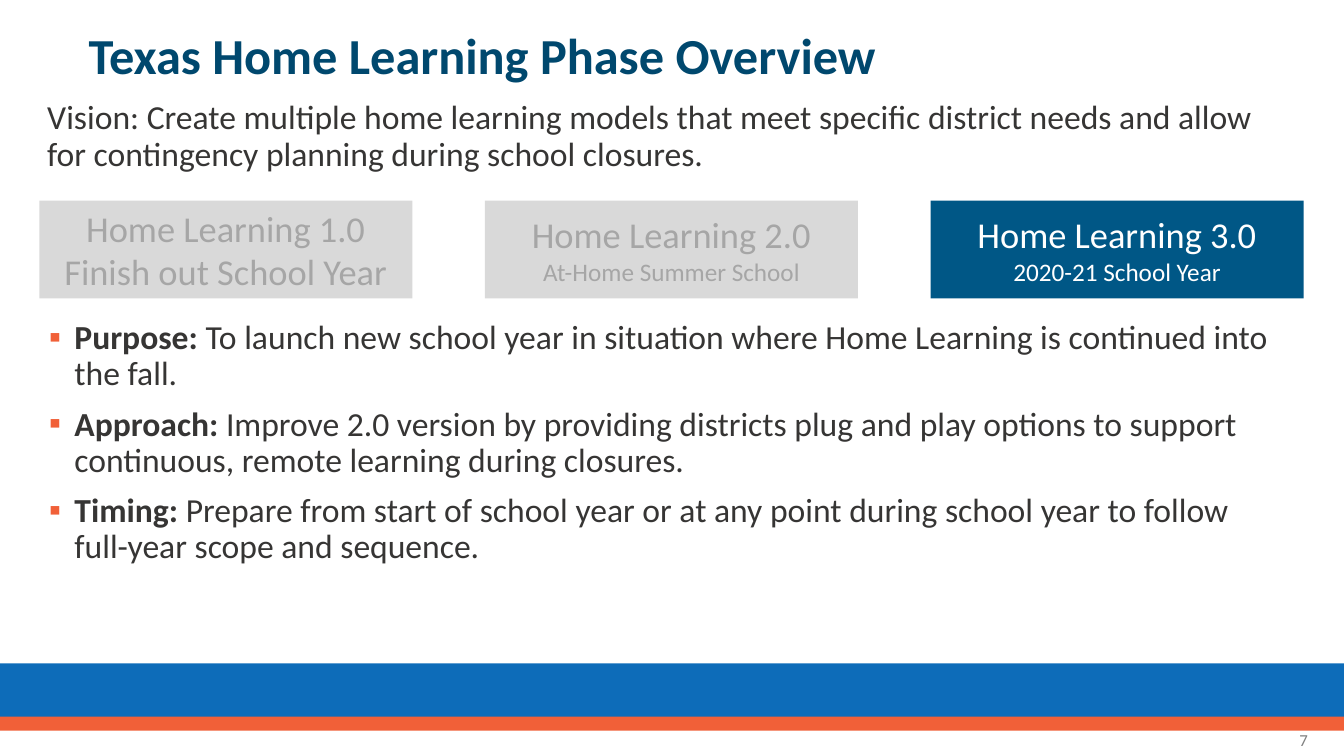
from lxml import etree
from pptx import Presentation
from pptx import util as u
from pptx.dml.color import RGBColor
from pptx.enum import shapes, text
from pptx.oxml.ns import qn

PX = 9144
FONT = "Calibri"
WHITE = RGBColor(0xFF, 0xFF, 0xFF)
NAVY = RGBColor(0x00, 0x48, 0x6E)
TEAL = RGBColor(0x00, 0x57, 0x86)
BLUE = RGBColor(0x0D, 0x6C, 0xB9)
ORANGE = RGBColor(0xF1, 0x60, 0x38)
INK = RGBColor(0x36, 0x35, 0x34)
LIGHT = RGBColor(0xD9, 0xD9, 0xD9)
FADED = RGBColor(0xA6, 0xA6, 0xA6)
GRAY = RGBColor(0x80, 0x80, 0x80)

PHASES = [
    ("Home Learning 1.0", "Finish out School Year", 26, LIGHT, FADED),
    ("Home Learning 2.0", "At-Home Summer School", 18, LIGHT, FADED),
    ("Home Learning 3.0", "2020-21 School Year", 18, TEAL, WHITE),
]
POINTS = [
    ("Purpose:", " To launch new school year in situation where Home Learning "
     "is continued into the fall."),
    ("Approach: ", "Improve 2.0 version by providing districts plug and play options "
     "to support continuous, remote learning during closures."),
    ("Timing: ", "Prepare from start of school year or at any point during school year "
     "to follow full-year scope and sequence."),
]


def emu(*lengths):
    return [length * PX for length in lengths]


def add_rect(s, box, fill):
    sp = s.shapes.add_shape(shapes.MSO_SHAPE.RECTANGLE, *emu(*box))
    sp.shadow.inherit = False
    sp.fill.solid()
    sp.fill.fore_color.rgb = fill
    sp.line.fill.background()
    return sp


def add_box(s, box):
    return s.shapes.add_textbox(*emu(*box))


def add_bullet(p, indent):
    pPr = p._p.get_or_add_pPr()
    pPr.set("marL", str(indent * PX))
    pPr.set("indent", str(-indent * PX))
    color = etree.SubElement(pPr, qn("a:buClr"))
    etree.SubElement(color, qn("a:srgbClr"), val=str(ORANGE))
    etree.SubElement(pPr, qn("a:buFont"), typeface=FONT)
    etree.SubElement(pPr, qn("a:buChar"), char="▪")


def write(sp, paragraphs, color, align=text.PP_ALIGN.LEFT, anchor=text.MSO_ANCHOR.TOP,
          spacing=1.0, before=0, bullet=False):
    tf = sp.text_frame
    tf.word_wrap = True
    tf.vertical_anchor = anchor
    for i, runs in enumerate(paragraphs):
        p = tf.add_paragraph() if i else tf.paragraphs[0]
        p.alignment = align
        p.line_spacing = spacing
        p.space_before = u.Pt(before if i else 0)
        if bullet:
            add_bullet(p, 25)
        for words, size, bold in runs:
            r = p.add_run()
            r.text = words
            r.font.name = FONT
            r.font.size = u.Pt(size)
            r.font.bold = bold
            r.font.color.rgb = color


def add_footer(s, x, y, w, number):
    add_rect(s, (x, y, w, 58), BLUE)
    add_rect(s, (x, y + 53, w, 14), ORANGE)
    write(add_box(s, (x + w - 326, y + 56, 300, 40)), [[(number, 12, False)]], GRAY,
          align=text.PP_ALIGN.RIGHT, anchor=text.MSO_ANCHOR.MIDDLE)


def add_header(s, x, y, w):
    write(add_box(s, (x + 41, y, w, 82)),
          [[("Texas Home Learning Phase Overview", 36, True)]],
          NAVY, anchor=text.MSO_ANCHOR.MIDDLE, spacing=0.9)
    vision = ("Vision: Create multiple home learning models that meet specific district "
              "needs and allow for contingency planning during school closures.")
    write(add_box(s, (x, y + 78, w, 103)), [[(vision, 24, False)]], INK, spacing=0.9)


def add_phases(s, x, y, w, h):
    width = 370
    step = (w - width) // (len(PHASES) - 1)
    for i, (name, period, size, fill, color) in enumerate(PHASES):
        sp = add_rect(s, (x + i * step, y, width, h), fill)
        write(sp, [[(name, 26, False)], [(period, size, False)]], color,
              align=text.PP_ALIGN.CENTER, anchor=text.MSO_ANCHOR.MIDDLE)


def add_points(s, x, y, w, h):
    paragraphs = [[(label, 24, True), (detail, 24, False)] for label, detail in POINTS]
    write(add_box(s, (x, y, w, h)), paragraphs, INK, spacing=0.9, before=10, bullet=True)


def main():
    prs = Presentation()
    prs.slide_width, prs.slide_height = emu(1333, 750)
    s = prs.slides.add_slide(prs.slide_layouts[6])
    add_footer(s, 0, 658, 1333, "7")
    add_header(s, 37, 17, 1257)
    add_phases(s, 39, 199, 1254, 97)
    add_points(s, 39, 313, 1246, 408)
    prs.save("out.pptx")


if __name__ == "__main__":
    main()
